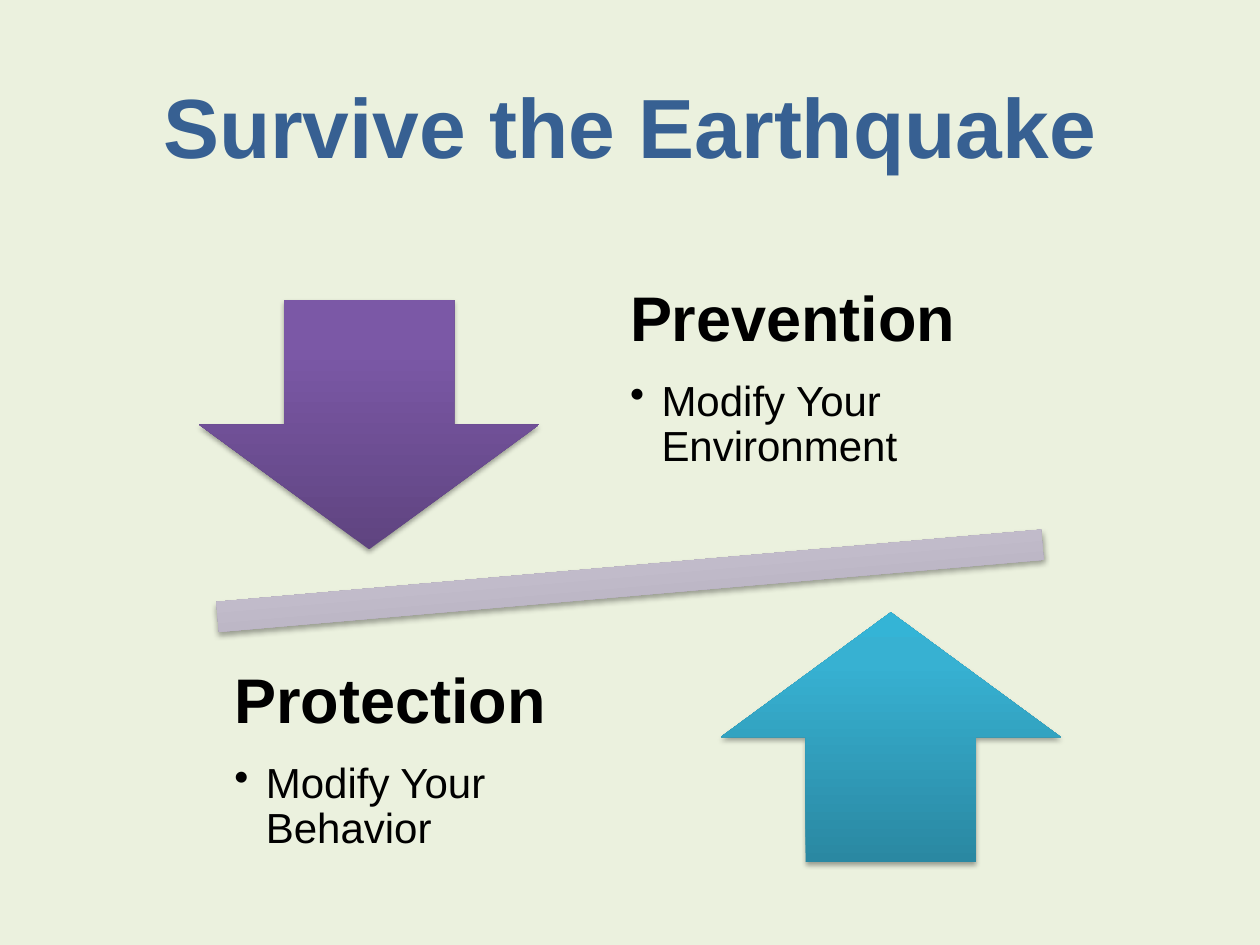
from lxml import etree
from pptx import Presentation
from pptx.dml.color import RGBColor
from pptx.enum.shapes import MSO_SHAPE as Preset
from pptx.enum.text import MSO_ANCHOR as Anchor, PP_ALIGN as Align
from pptx.oxml import parse_xml
from pptx.oxml.ns import nsdecls, qn
from pptx.util import Inches, Pt

BACKGROUND = RGBColor(0xEB, 0xF1, 0xDE)
TITLE_BLUE = RGBColor(0x37, 0x60, 0x92)
BLACK = RGBColor(0x00, 0x00, 0x00)
# Gradient colours from bottom to top
BAR_COLORS = (RGBColor(0xA1, 0x9C, 0xA8), RGBColor(0xD1, 0xCB, 0xDB), RGBColor(0xD2, 0xCB, 0xDC))
PURPLES = (RGBColor(0x5F, 0x44, 0x80), RGBColor(0x7B, 0x58, 0xA6), RGBColor(0x7C, 0x57, 0xA8))
TEALS = (RGBColor(0x2A, 0x88, 0xA2), RGBColor(0x37, 0xB1, 0xD2), RGBColor(0x34, 0xB4, 0xD6))
STOPS = (0, 80, 100)
FONT = "Arial"
INSET = 0.28
BULLET_INDENT = Inches(0.25)


def add_run(paragraph, text, size, color, bold=False):
    run = paragraph.add_run()
    run.text = text
    run.font.name = FONT
    run.font.size = Pt(size)
    run.font.bold = bold
    run.font.color.rgb = color


def add_text_frame(slide, box, anchor):
    frame = slide.shapes.add_textbox(*map(Inches, box)).text_frame
    frame.word_wrap = True
    frame.vertical_anchor = anchor
    return frame


def add_title(slide, text):
    paragraph = add_text_frame(slide, (0.5, 0.37, 9, 1.25), Anchor.MIDDLE).paragraphs[0]
    paragraph.alignment = Align.CENTER
    add_run(paragraph, text, 48, TITLE_BLUE, bold=True)


def add_gradient_shape(slide, preset, box, colors, rotation=0):
    """Add a borderless shape with a vertical gradient and a soft shadow below."""
    shape = slide.shapes.add_shape(preset, *map(Inches, box))
    shape.rotation = rotation
    shape.line.fill.background()
    stops = "".join(
        f'<a:gs pos="{stop * 1000}"><a:srgbClr val="{color}"/></a:gs>'
        for stop, color in zip(STOPS, colors)
    )
    gradient = parse_xml(
        f'<a:gradFill {nsdecls("a")} rotWithShape="1"><a:gsLst>{stops}</a:gsLst>'
        '<a:lin ang="16200000" scaled="0"/></a:gradFill>'
    )
    shadow = parse_xml(
        f'<a:effectLst {nsdecls("a")}>'
        f'<a:outerShdw blurRad="{Pt(3.1)}" dist="{Pt(1.8)}" dir="5400000" rotWithShape="0">'
        '<a:srgbClr val="000000"><a:alpha val="35000"/></a:srgbClr>'
        '</a:outerShdw></a:effectLst>'
    )
    properties = shape._element.spPr
    properties.find(qn("a:prstGeom")).addnext(gradient)
    properties.find(qn("a:ln")).addnext(shadow)


def add_bullet(paragraph):
    properties = paragraph._p.get_or_add_pPr()
    properties.set("marL", str(BULLET_INDENT))
    properties.set("indent", str(-BULLET_INDENT))
    etree.SubElement(properties, qn("a:buChar")).set("char", "•")


def add_topic(slide, box, heading, detail, anchor=Anchor.MIDDLE, top_inset=INSET):
    frame = add_text_frame(slide, box, anchor)
    frame.margin_left = frame.margin_right = frame.margin_bottom = Inches(INSET)
    frame.margin_top = Inches(top_inset)
    heading_paragraph, detail_paragraph = frame.paragraphs[0], frame.add_paragraph()
    for paragraph, space in ((heading_paragraph, 14), (detail_paragraph, 4)):
        paragraph.line_spacing = 0.9
        paragraph.space_after = Pt(space)
    add_run(heading_paragraph, heading, 36, BLACK, bold=True)
    add_bullet(detail_paragraph)
    add_run(detail_paragraph, detail, 24, BLACK)


def main():
    presentation = Presentation()
    presentation.slide_width = Inches(10)
    presentation.slide_height = Inches(7.5)
    slide = presentation.slides.add_slide(presentation.slide_layouts[6])
    slide.background.fill.solid()
    slide.background.fill.fore_color.rgb = BACKGROUND

    add_title(slide, "Survive the Earthquake")
    add_gradient_shape(slide, Preset.MATH_MINUS, (0.53, 4.1, 8.94, 1.02), BAR_COLORS, 355)
    add_gradient_shape(slide, Preset.DOWN_ARROW, (1.58, 2.38, 2.7, 1.98), PURPLES)
    add_topic(slide, (4.72, 2.22, 3.98, 2.08), "Prevention", "Modify Your Environment",
              Anchor.TOP, 0.06)
    add_gradient_shape(slide, Preset.UP_ARROW, (5.72, 4.86, 2.7, 1.98), TEALS)
    add_topic(slide, (1.58, 5, 3.41, 2.08), "Protection", "Modify Your Behavior")

    presentation.save("out.pptx")


if __name__ == "__main__":
    main()
